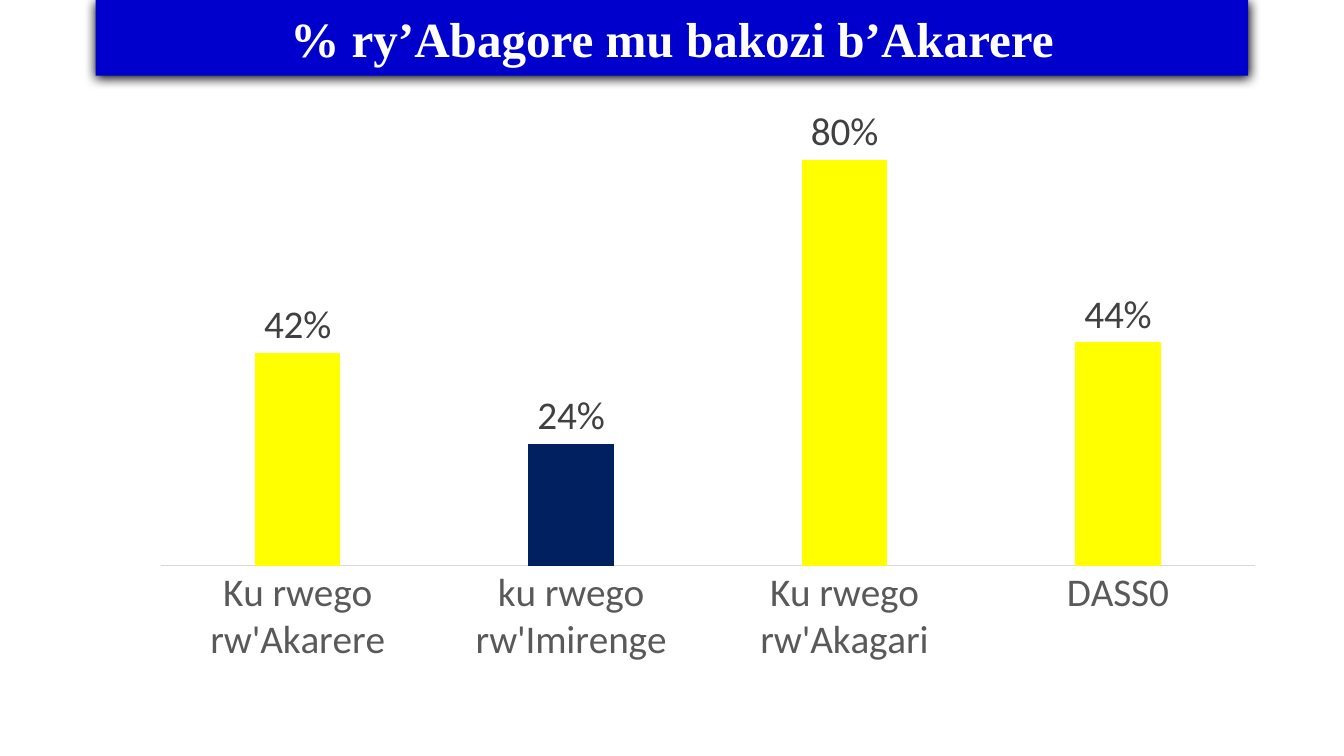
from dataclasses import dataclass

from pptx import Presentation, util as u
from pptx.chart.data import CategoryChartData
from pptx.dml.color import RGBColor
from pptx.enum import chart as ch, shapes, text
from pptx.oxml import parse_xml
from pptx.oxml.ns import nsdecls


@dataclass(frozen=True)
class Theme:
    """Colours, fonts and type sizes of the slide."""
    banner: str = "0000CC"
    banner_text: str = "FFFFFF"
    bar: str = "FFFF00"
    accent_bar: str = "002060"
    axis_text: str = "595959"
    axis_line: str = "D9D9D9"
    label_text: str = "404040"
    title_font: str = "Times New Roman"
    chart_font: str = "Calibri"
    title_size: float = 35.1
    chart_size: float = 28


THEME = Theme()
TITLE = "% ry’Abagore mu bakozi b’Akarere"
SHARES = {
    "Ku rwego rw'Akarere": 0.42,
    "ku rwego rw'Imirenge": 0.24,
    "Ku rwego rw'Akagari": 0.8,
    "DASS0": 0.44,
}
ACCENT_INDEX = 1
PLOT = {"x": 0.02, "y": 0.02, "w": 0.96, "h": 0.79}


def apply(obj, values):
    """Set each named attribute on an object."""
    for name, value in values.items():
        setattr(obj, name, value)


def style_font(font, name, size, color, bold=False):
    """Format a font."""
    apply(font, {"name": name, "size": u.Pt(size), "bold": bold})
    font.color.rgb = RGBColor.from_string(color)


def paint(fill, color):
    """Give a fill one solid colour."""
    fill.solid()
    fill.fore_color.rgb = RGBColor.from_string(color)


def add_banner(s, box):
    """Draw the title banner with its soft shadow."""
    sp = s.shapes.add_shape(shapes.MSO_SHAPE.RECTANGLE, *box)
    sp.shadow.inherit = False
    paint(sp.fill, THEME.banner)
    sp.line.fill.background()
    effects = sp.element.spPr.find("{*}effectLst")
    effects.append(parse_xml(
        f'<a:outerShdw {nsdecls("a")} blurRad="{u.Pt(8.5)}" dist="{u.Pt(1)}" '
        'dir="5400000" algn="t" rotWithShape="0"><a:srgbClr val="000000"/></a:outerShdw>'))
    tf = sp.text_frame
    apply(tf, {"word_wrap": True, "vertical_anchor": text.MSO_ANCHOR.MIDDLE})
    p = tf.paragraphs[0]
    p.alignment = text.PP_ALIGN.CENTER
    r = p.add_run()
    r.text = TITLE
    style_font(r.font, THEME.title_font, THEME.title_size, THEME.banner_text, True)


def fix_plot_area(chart):
    """Place the inner plot area by fractions of the chart."""
    area = chart._chartSpace.chart.plotArea
    for old in area.findall("{*}layout"):
        area.remove(old)
    sizes = "".join(f'<c:{k} val="{v}"/>' for k, v in PLOT.items())
    area.insert(0, parse_xml(
        f'<c:layout {nsdecls("c")}><c:manualLayout><c:layoutTarget val="inner"/>'
        f'<c:xMode val="edge"/><c:yMode val="edge"/>{sizes}</c:manualLayout></c:layout>'))


def add_share_chart(s, box):
    """Draw the column chart of women's share by level."""
    data = CategoryChartData(number_format="0%")
    data.categories = list(SHARES)
    data.add_series("Series 1", list(SHARES.values()))
    chart = s.shapes.add_chart(ch.XL_CHART_TYPE.COLUMN_CLUSTERED, *box, data).chart
    apply(chart, {"has_legend": False, "has_title": False})
    style_font(chart.font, THEME.chart_font, THEME.chart_size, THEME.axis_text)
    fix_plot_area(chart)

    axis = chart.category_axis
    apply(axis, {"major_tick_mark": ch.XL_TICK_MARK.NONE, "has_major_gridlines": False})
    style_font(axis.tick_labels.font, THEME.chart_font, THEME.chart_size, THEME.axis_text)
    paint(axis.format.line.fill, THEME.axis_line)
    axis.format.line.width = u.Pt(0.75)
    apply(chart.value_axis, {"visible": False, "has_major_gridlines": False,
                             "minimum_scale": 0, "maximum_scale": 0.9})

    plot = chart.plots[0]
    apply(plot, {"gap_width": 219, "overlap": -27, "vary_by_categories": False})
    series = plot.series[0]
    paint(series.format.fill, THEME.bar)
    paint(series.points[ACCENT_INDEX].format.fill, THEME.accent_bar)
    labels = series.data_labels
    apply(labels, {"show_value": True, "number_format": "0%",
                   "number_format_is_linked": False,
                   "position": ch.XL_LABEL_POSITION.OUTSIDE_END})
    style_font(labels.font, THEME.chart_font, THEME.chart_size, THEME.label_text)


def main():
    """Build and save the slide."""
    prs = Presentation()
    apply(prs, {"slide_width": u.Inches(13.33), "slide_height": u.Inches(7.5)})
    s = prs.slides.add_slide(prs.slide_layouts[6])
    add_share_chart(s, [u.Inches(v) for v in (1.37, 0.97, 11.3, 5.73)])
    add_banner(s, [u.Inches(v) for v in (0.95, 0, 11.43, 0.75)])
    prs.save("out.pptx")


if __name__ == "__main__":
    main()
